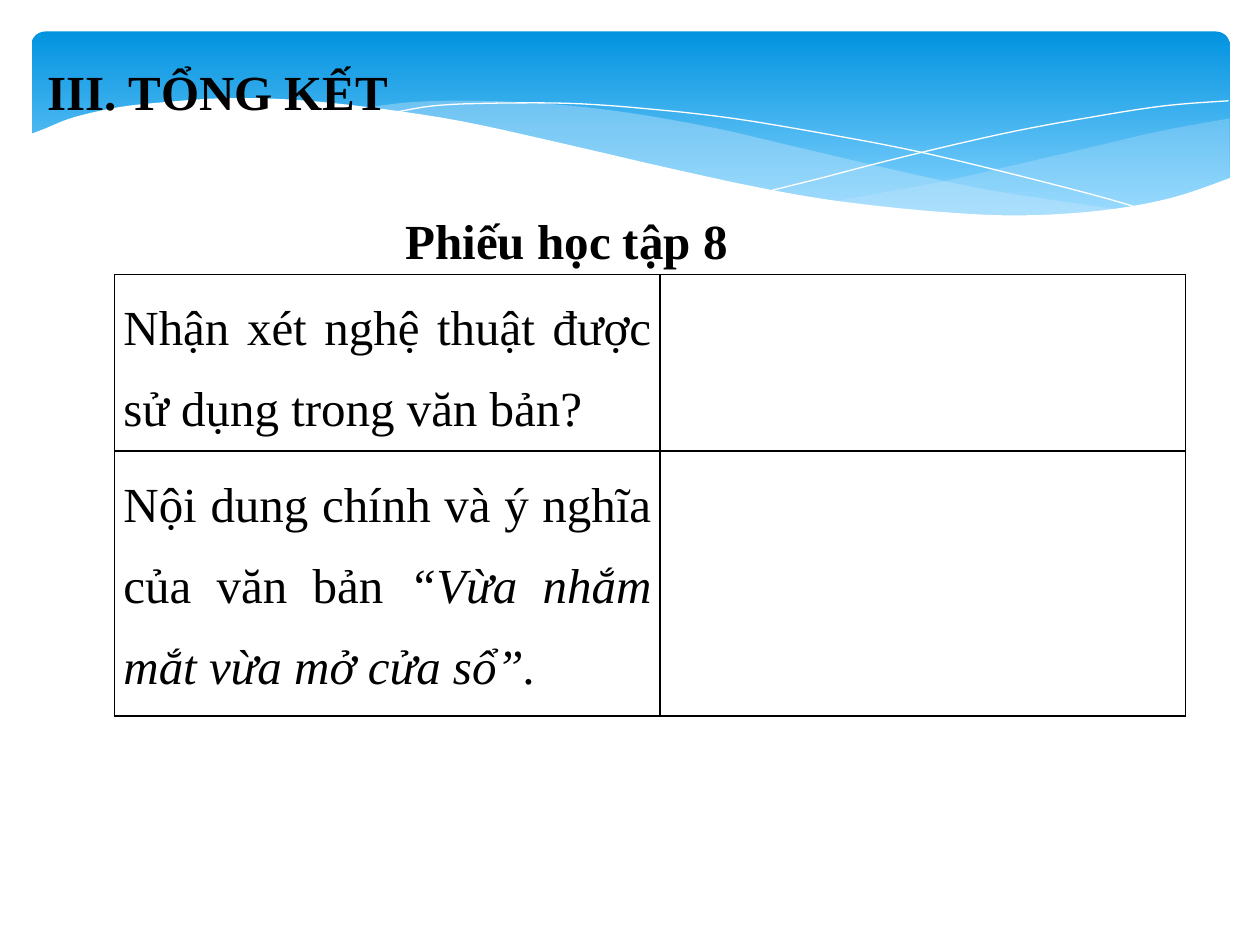
from dataclasses import dataclass

from lxml import etree
from pptx import Presentation
from pptx.dml.color import RGBColor
from pptx.enum.shapes import MSO_SHAPE
from pptx.enum.text import MSO_AUTO_SIZE, PP_ALIGN
from pptx.oxml.ns import qn
from pptx.util import Inches, Pt

ROUNDED = MSO_SHAPE.ROUNDED_RECTANGLE
LEFT, JUSTIFY = PP_ALIGN.LEFT, PP_ALIGN.JUSTIFY
FIT_SHAPE = MSO_AUTO_SIZE.SHAPE_TO_FIT_TEXT
CURVE_STEPS = 5


@dataclass(frozen=True)
class Theme:
    """Colours, font and sizes of the slide."""
    font: str = "Times New Roman"
    size: int = 28
    text: str = "000000"
    border: str = "000000"
    border_width: int = 1
    banner_top: str = "0293E0"
    banner_bottom: str = "83D3FE"
    wave: str = "C6E7FC"
    paper: str = "FFFFFF"


@dataclass(frozen=True)
class Box:
    """A region of the slide in inches."""
    left: float
    top: float
    width: float
    height: float

    def lengths(self):
        """Return the four lengths that python-pptx expects."""
        return [Inches(value) for value in (self.left, self.top, self.width, self.height)]


THEME = Theme()

RIGHT_WAVE = [
    [(9.51, 0.69), (8.96, 0.79), (8.36, 0.93), (7.8, 1.06), (7.28, 1.18), (6.81, 1.27), (6.36, 1.35)],
    [(6.36, 1.35), (6.8, 1.4), (7.32, 1.45), (7.78, 1.47), (8.29, 1.45), (8.72, 1.4),
     (9.1, 1.31), (9.51, 1.16)],
]
MIDDLE_WAVE = [
    [(8.68, 1.42), (8.12, 1.34), (7.5, 1.24), (6.81, 1.09), (6.04, 0.91), (5.44, 0.77), (4.77, 0.65),
     (4.17, 0.58), (3.55, 0.55), (3.03, 0.56), (2.61, 0.61)],
    [(2.61, 0.61), (3.17, 0.69), (3.79, 0.81), (4.24, 0.91), (5.05, 1.1), (5.76, 1.25), (6.4, 1.36),
     (6.97, 1.43), (7.48, 1.47), (7.93, 1.48), (8.32, 1.46), (8.68, 1.42)],
]
FALLING_LINE = [
    [(2.84, 0.65), (3.19, 0.59), (3.62, 0.57), (4.25, 0.57), (4.85, 0.61), (5.57, 0.69), (6.4, 0.83),
     (7.02, 0.95), (7.7, 1.11), (8.44, 1.3), (8.82, 1.41)],
]
RISING_LINE = [
    [(5.88, 1.26), (6.28, 1.16), (6.7, 1.05), (7.23, 0.92), (7.81, 0.79), (8.41, 0.68),
     (8.99, 0.59), (9.5, 0.55)],
]
PAPER_EDGE = [
    [(9.52, 1.16), (9.05, 1.32), (8.5, 1.42), (7.84, 1.46), (7.19, 1.43), (6.43, 1.35), (5.78, 1.24),
     (5.04, 1.08), (4.22, 0.89), (3.4, 0.71), (2.67, 0.6), (2.05, 0.54), (1.52, 0.53), (1.07, 0.56),
     (0.7, 0.6), (0.34, 0.68), (0.11, 0.77), (-0.02, 0.82)],
    [(-0.02, 1.99), (9.52, 1.99)],
]

TABLE_ROWS = [
    (1.4, [("Nhận xét nghệ thuật được sử dụng trong văn bản?", False)]),
    (2.1, [("Nội dung chính và ý nghĩa của văn bản ", False), ("“Vừa nhắm mắt vừa mở cửa sổ”.", True)]),
]


def colour(value):
    """Turn a hex value into an RGB colour."""
    return RGBColor.from_string(value)


def write_text(frame, runs, bold=False, align=LEFT, spacing=1.0):
    """Fill a text frame with one paragraph of (text, italic) runs."""
    paragraph = frame.paragraphs[0]
    paragraph.alignment = align
    paragraph.line_spacing = spacing
    for text, italic in runs:
        run = paragraph.add_run()
        run.text = text
        font = run.font
        font.name, font.size = THEME.font, Pt(THEME.size)
        font.bold, font.italic = bold, italic
        font.color.rgb = colour(THEME.text)


def smooth(points):
    """Sample a Catmull-Rom curve through the points."""
    padded = [points[0], *points, points[-1]]
    samples = [points[0]]
    for before, start, end, after in zip(padded, padded[1:], padded[2:], padded[3:]):
        for step in range(1, CURVE_STEPS + 1):
            t = step / CURVE_STEPS
            samples.append(tuple(
                0.5 * (2 * b + (c - a) * t + (2 * a - 5 * b + 4 * c - d) * t ** 2
                       + (3 * b - a - 3 * c + d) * t ** 3)
                for a, b, c, d in zip(before, start, end, after)))
    return samples


def add_wave(slide, box, curves, fill=None, opacity=100):
    """Draw curves as one filled outline, or as an open white line without a fill."""
    points = [(Inches(box.left + x), Inches(box.top + y)) for curve in curves for x, y in smooth(curve)]
    builder = slide.shapes.build_freeform(*points[0], scale=1.0)
    builder.add_line_segments(points[1:], close=fill is not None)
    shape = builder.convert_to_shape()
    shape.shadow.inherit = False
    if fill is None:
        shape.fill.background()
        shape.line.color.rgb = colour(THEME.paper)
        shape.line.width = Pt(0)
        return
    shape.fill.solid()
    shape.fill.fore_color.rgb = colour(fill)
    shape.line.fill.background()
    if opacity < 100:
        tint = shape.fill._xPr.find(".//" + qn("a:srgbClr"))
        etree.SubElement(tint, qn("a:alpha"), val=str(opacity * 1000))


def add_banner(slide, box):
    """Place the gradient banner with its waves."""
    shape = slide.shapes.add_shape(ROUNDED, *box.lengths())
    shape.adjustments[0] = 0.07
    shape.shadow.inherit = False
    shape.line.fill.background()
    shape.fill.gradient()
    shape.fill.gradient_angle = 270
    stops = [(0, THEME.banner_top), (0.9, THEME.banner_bottom)]
    for stop, (position, value) in zip(shape.fill.gradient_stops, stops):
        stop.position = position
        stop.color.rgb = colour(value)
    add_wave(slide, box, RIGHT_WAVE, THEME.wave, 29)
    add_wave(slide, box, MIDDLE_WAVE, THEME.wave, 40)
    add_wave(slide, box, FALLING_LINE)
    add_wave(slide, box, RISING_LINE)
    add_wave(slide, box, PAPER_EDGE, THEME.paper)


def add_heading(slide, box, text, wrap=True, **text_format):
    """Place a bold heading in a text box."""
    frame = slide.shapes.add_textbox(*box.lengths()).text_frame
    frame.word_wrap = wrap
    frame.auto_size = FIT_SHAPE
    write_text(frame, [(text, False)], bold=True, **text_format)


def add_borders(cell):
    """Outline all four sides of a table cell."""
    properties = cell._tc.get_or_add_tcPr()
    for index, side in enumerate(("lnL", "lnR", "lnT", "lnB")):
        line = etree.Element(qn("a:" + side), w=str(Pt(THEME.border_width)))
        fill = etree.SubElement(line, qn("a:solidFill"))
        etree.SubElement(fill, qn("a:srgbClr"), val=THEME.border)
        properties.insert(index, line)


def add_worksheet(slide, box):
    """Place the worksheet table with questions and empty answer cells."""
    table = slide.shapes.add_table(len(TABLE_ROWS), 2, *box.lengths()).table
    table.first_row = table.horz_banding = False
    question_width = 4.33
    for column, width in zip(table.columns, (question_width, box.width - question_width)):
        column.width = Inches(width)
    for row, (height, question) in zip(table.rows, TABLE_ROWS):
        row.height = Inches(height)
        for cell in row.cells:
            cell.fill.background()
            add_borders(cell)
        cell = row.cells[0]
        cell.margin_left = cell.margin_right = Inches(0.07)
        cell.margin_top = cell.margin_bottom = 0
        write_text(cell.text_frame, question, align=JUSTIFY, spacing=1.5)


def main():
    """Build and save the slide."""
    presentation = Presentation()
    presentation.slide_width, presentation.slide_height = Inches(10), Inches(7.5)
    slide = presentation.slides.add_slide(presentation.slide_layouts[6])
    add_banner(slide, Box(0.25, 0.25, 9.51, 1.56))
    add_heading(slide, Box(0.28, 0.44, 5.51, 0.57), "III. TỔNG KẾT")
    add_heading(slide, Box(3.12, 1.39, 2.79, 0.81), "Phiếu học tập 8", wrap=False, align=JUSTIFY, spacing=1.5)
    add_worksheet(slide, Box(0.91, 2.18, 8.5, 3.5))
    presentation.save("out.pptx")


if __name__ == "__main__":
    main()
